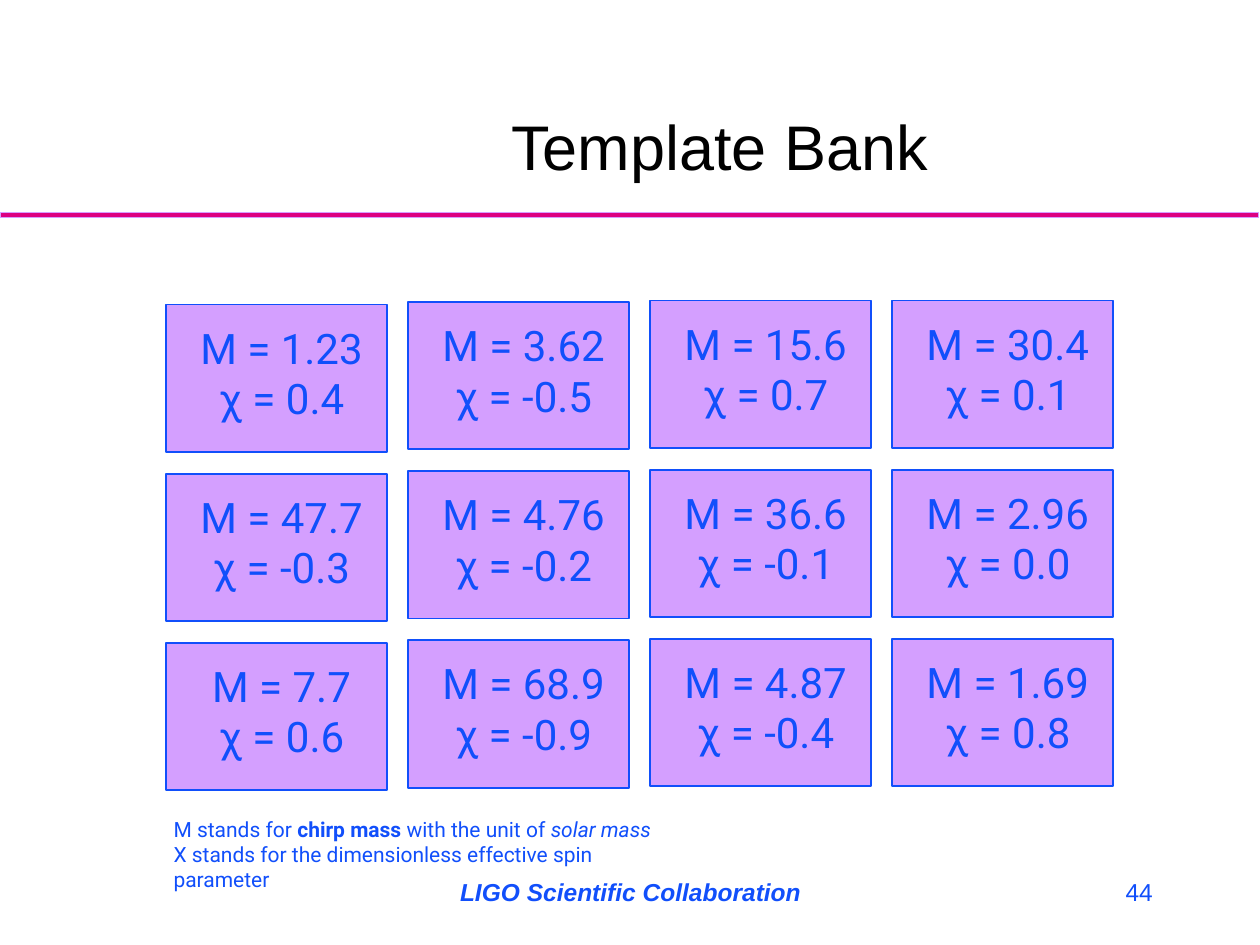
import pptx
import pptx.dml.color
import pptx.enum.shapes
import pptx.enum.text
import pptx.util

Cm = pptx.util.Cm
ALIGN = pptx.enum.text.PP_ALIGN
ANCHOR = pptx.enum.text.MSO_ANCHOR
COLORS = {"ink": "114FFB", "title": "000000", "card": "D49FFF", "rule": "DC0081"}

# Chirp mass and effective spin of each template
TEMPLATES = [
    [("1.23", "0.4"), ("3.62", "-0.5"), ("15.6", "0.7"), ("30.4", "0.1")],
    [("47.7", "-0.3"), ("4.76", "-0.2"), ("36.6", "-0.1"), ("2.96", "0.0")],
    [("7.7", "0.6"), ("68.9", "-0.9"), ("4.87", "-0.4"), ("1.69", "0.8")],
]
COLUMN_PITCH, ROW_PITCH = 4.88, 3.41
COLUMN_LIFTS = [0, 0.05, 0.08, 0.08]  # columns rise slightly to the right
CARD_WIDTH, CARD_HEIGHT = 4.45, 2.97


def rgb(name):
    return pptx.dml.color.RGBColor.from_string(COLORS[name])


def add_rectangle(slide, left, top, width, height, fill, line, line_width):
    rectangle = slide.shapes.add_shape(
        pptx.enum.shapes.MSO_SHAPE.RECTANGLE, Cm(left), Cm(top), Cm(width), Cm(height))
    rectangle.shadow.inherit = False
    rectangle.fill.solid()
    rectangle.fill.fore_color.rgb = rgb(fill)
    rectangle.line.color.rgb = rgb(line)
    rectangle.line.width = pptx.util.Pt(line_width)


def add_text(slide, left, top, width, height, lines, size, font="Arial",
             color="ink", align=ALIGN.LEFT, anchor=ANCHOR.TOP):
    """Each line is a list of (text, style) runs; style is "", "bold" or "italic"."""
    frame = slide.shapes.add_textbox(Cm(left), Cm(top), Cm(width), Cm(height)).text_frame
    frame.word_wrap = True
    frame.vertical_anchor = anchor
    for index, runs in enumerate(lines):
        paragraph = frame.add_paragraph() if index else frame.paragraphs[0]
        paragraph.alignment = align
        paragraph.font.name = font
        paragraph.font.size = pptx.util.Pt(size)
        paragraph.font.color.rgb = rgb(color)
        for text, style in runs:
            run = paragraph.add_run()
            run.text = text
            # Runs do not reliably inherit paragraph fonts, so set them here too
            run.font.name = font
            run.font.size = pptx.util.Pt(size)
            run.font.color.rgb = rgb(color)
            if "bold" in style:
                run.font.bold = True
            if "italic" in style:
                run.font.italic = True


def add_header(slide, left, top, width):
    add_text(slide, left + 4.45, top + 0.64, 20.12, 3.18, [[("Template Bank", "")]], 36,
             color="title", align=ALIGN.CENTER, anchor=ANCHOR.BOTTOM)
    add_rectangle(slide, left, top + 4.29, width, 0.1, "rule", "card", 0.75)


def add_card(slide, left, top, mass, spin):
    add_rectangle(slide, left, top, CARD_WIDTH, CARD_HEIGHT, "card", "ink", 1)
    add_text(slide, left, top + 0.23, 4.65, 3.33,
             [[(f"M = {mass}", "")], [(f"χ = {spin}", "")]], 24, "Roboto",
             align=ALIGN.CENTER)


def add_bank(slide, left, top):
    for row, templates in enumerate(TEMPLATES):
        for column, (mass, spin) in enumerate(templates):
            add_card(slide, left + column * COLUMN_PITCH,
                     top + row * ROW_PITCH - COLUMN_LIFTS[column], mass, spin)


def add_legend(slide, left, top):
    add_text(slide, left, top, 10.62, 1.27, [
        [("M stands for ", ""), ("chirp mass ", "bold"),
         ("with the unit of ", ""), ("solar mass", "italic")],
        [("Χ stands for the dimensionless effective spin parameter", "")],
    ], 12, "Roboto")


def add_footer(slide, left, top):
    add_text(slide, left + 8.69, top, 8.05, 1.27,
             [[("LIGO Scientific Collaboration", "bold italic")]], 14,
             align=ALIGN.CENTER, anchor=ANCHOR.MIDDLE)
    add_text(slide, left + 18.21, top, 5.28, 1.27, [[("44", "")]], 14,
             align=ALIGN.RIGHT, anchor=ANCHOR.MIDDLE)


def main():
    presentation = pptx.Presentation()
    presentation.slide_width, presentation.slide_height = Cm(25.4), Cm(19.05)
    slide = presentation.slides.add_slide(presentation.slide_layouts[6])
    add_header(slide, 0, 0, 25.37)
    add_footer(slide, 0, 17.35)
    add_legend(slide, 3.25, 16.33)
    add_bank(slide, 3.35, 6.14)
    presentation.save("out.pptx")


if __name__ == "__main__":
    main()
